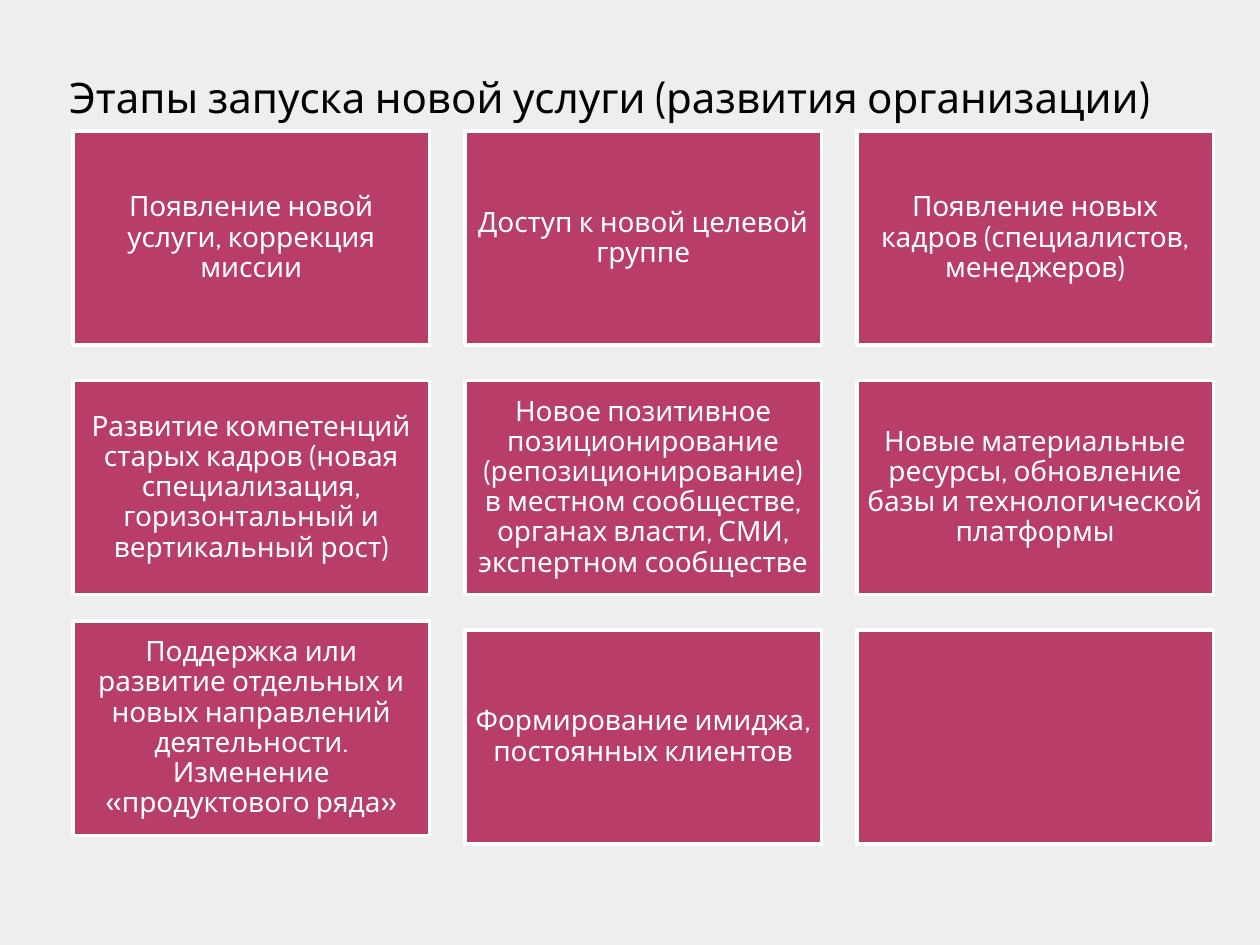
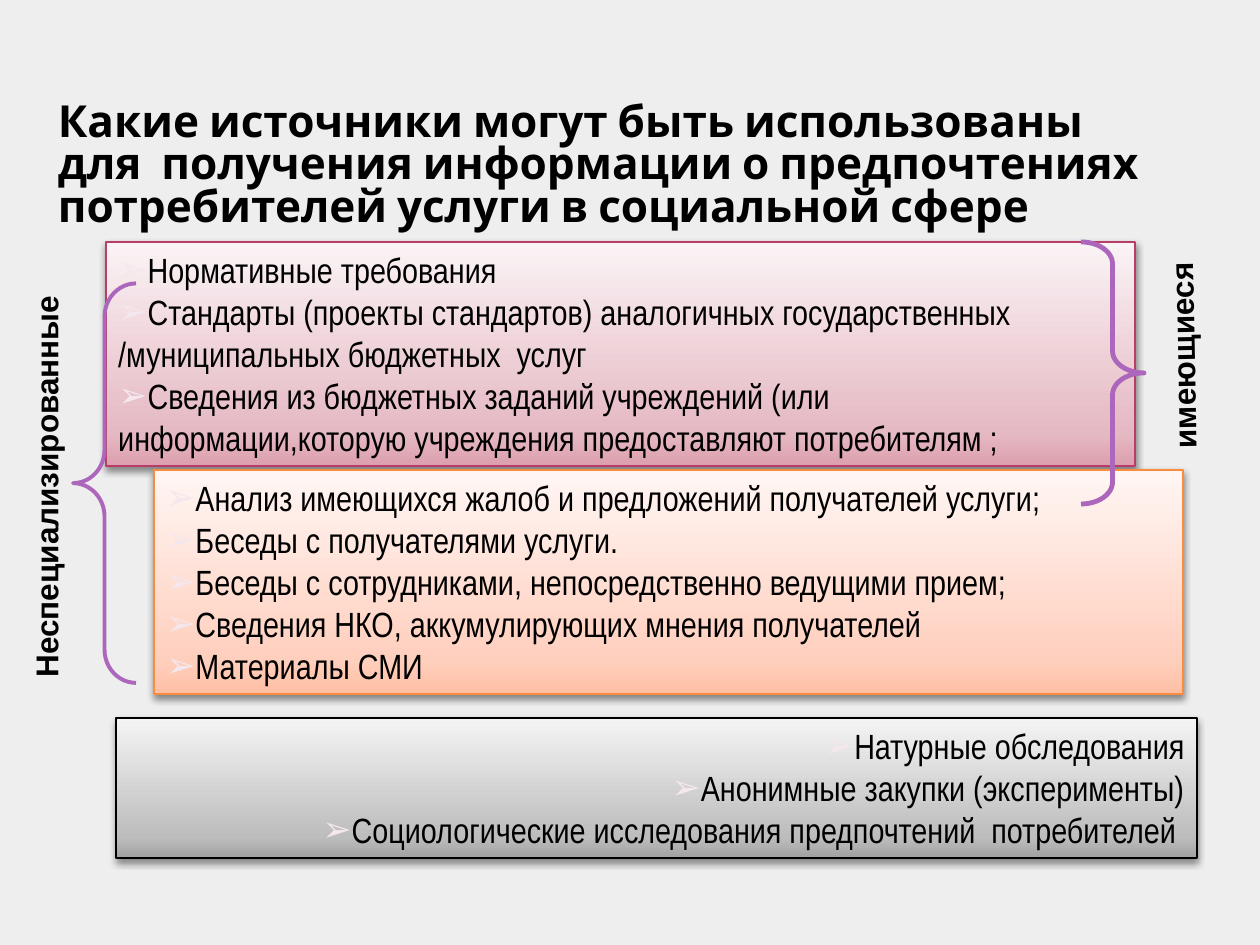
from lxml.etree import SubElement
from pptx import Presentation
from pptx.dml.color import RGBColor
from pptx.enum.shapes import MSO_SHAPE
from pptx.enum.text import MSO_ANCHOR, MSO_AUTO_SIZE, PP_ALIGN
from pptx.oxml.ns import qn
from pptx.util import Inches, Pt

COLORS = {
    "back": "EEEEEE", "text": "000000", "white": "FFFFFF", "tile": "B83D68",
    "orange": "FA8D3D", "brace": "AC66BB", "bullet": "F4E7ED",
}
GRADIENTS = {
    "pink": ("DC9FAD", "E5B9C3", "FAF3F5"),
    "peach": ("FFBEA3", "FFCFBD", "FFF6F4"),
    "grey": ("A2A2A2", "BDBDBD", "F4F4F4"),
}
STOPS = (0, 15, 100)
HEAD_FONT, LIST_FONT, LABEL_FONT = "Cabin", "Arial Narrow", "Arial"

STAGES_TITLE = "Этапы запуска новой услуги (развития организации)"
STAGES = [
    ["Появление новой услуги, коррекция миссии",
     "Доступ к новой целевой группе",
     "Появление новых кадров (специалистов, менеджеров)"],
    ["Развитие компетенций старых кадров (новая специализация, "
     "горизонтальный и вертикальный рост)",
     "Новое позитивное позиционирование (репозиционирование) в местном "
     "сообществе, органах власти, СМИ, экспертном сообществе",
     "Новые материальные ресурсы, обновление базы и технологической платформы"],
    ["Поддержка или развитие отдельных и новых направлений деятельности. "
     "Изменение «продуктового ряда»",
     "Формирование имиджа, постоянных клиентов",
     ""],
]
TILE_W, TILE_H, TILE_GAP = 2.83, 1.7, 0.28
GRID_LEFT, GRID_TOP = 0.58, 1.04
TILE_LIFT = {(2, 0): 0.07}  # (row, column): raised above its row

SOURCES_TITLE = ("Какие источники могут быть использованы для  получения "
                 "информации о предпочтениях потребителей услуги в социальной сфере")
SOURCES = [
    {"at": (0.84, 1.92, 8.17, 1.78), "grad": "pink", "line": "tile", "right": False,
     "items": ["Нормативные требования",
               "Стандарты (проекты стандартов) аналогичных государственных "
               "/муниципальных бюджетных  услуг",
               "Сведения из бюджетных заданий учреждений (или  "
               "информации,которую учреждения предоставляют потребителям ;"]},
    {"at": (1.22, 3.73, 8.17, 1.78), "grad": "peach", "line": "orange", "right": False,
     "items": ["Анализ имеющихся жалоб и предложений получателей услуги;",
               "Беседы с получателями услуги.",
               "Беседы с сотрудниками, непосредственно ведущими прием;",
               "Сведения НКО, аккумулирующих мнения получателей",
               "Материалы СМИ"]},
    {"at": (0.92, 5.7, 8.58, 1.11), "grad": "grey", "line": "text", "right": True,
     "items": ["Натурные обследования",
               "Анонимные закупки (эксперименты)",
               "Социологические исследования предпочтений  потребителей "]},
]
BRACES = [
    (MSO_SHAPE.RIGHT_BRACE, (8.58, 1.92, 0.5, 2.08), 0.347, 2.75),
    (MSO_SHAPE.LEFT_BRACE, (0.58, 2.25, 0.5, 3.17), 0.528, 2.25),
]
LABELS = [
    ("имеющиеся", (8.3, 2.38, 2.16, 0.4), 268.9),
    ("Неспециализированные", (-1.29, 3.62, 3.31, 0.4), 270),
]


def rgb(name):
    return RGBColor.from_string(COLORS[name])


def add_run(p, text, font, size, color="text", bold=False):
    r = p.add_run()
    r.text = text
    r.font.name, r.font.size, r.font.bold = font, Pt(size), bold
    r.font.color.rgb = rgb(color)


def add_slide(prs, title, at, size, bold=False, spacing=None):
    s = prs.slides.add_slide(prs.slide_layouts.get_by_name("Title Only"))
    sp = s.shapes.title
    sp.left, sp.top, sp.width, sp.height = map(Inches, at)
    tf = sp.text_frame
    tf.auto_size, tf.vertical_anchor = MSO_AUTO_SIZE.NONE, MSO_ANCHOR.BOTTOM
    p = tf.paragraphs[0]
    p.alignment, p.line_spacing = PP_ALIGN.LEFT, spacing
    add_run(p, title, HEAD_FONT, size, bold=bold)
    return s


def add_outlined(s, kind, at, line, width):
    sp = s.shapes.add_shape(kind, *map(Inches, at))
    sp.shadow.inherit = False
    sp.line.color.rgb, sp.line.width = rgb(line), Pt(width)
    return sp


def fill_upwards(sp, colors):
    """Fill with a gradient whose first colour is at the bottom edge."""
    sp.fill.gradient()
    sp.fill.gradient_angle = 90
    stops = next(sp.element.spPr.iter(qn("a:gsLst")))
    for old in list(stops):
        stops.remove(old)
    for share, color in zip(STOPS, colors):
        gs = SubElement(stops, qn("a:gs"), pos=str(share * 1000))
        SubElement(gs, qn("a:srgbClr"), val=color)


def drop_shadow(sp):
    effects = sp.element.spPr.find(qn("a:effectLst"))
    shadow = SubElement(effects, qn("a:outerShdw"), blurRad=str(Pt(4)), dist=str(Pt(2)),
                        dir="5400000", rotWithShape="0")
    color = SubElement(shadow, qn("a:srgbClr"), val=COLORS["text"])
    SubElement(color, qn("a:alpha"), val="43000")


def add_bullet(p, margin):
    pPr = p._p.get_or_add_pPr()
    pPr.set("marL", str(Inches(margin)))
    pPr.set("indent", "0")
    SubElement(SubElement(pPr, qn("a:buClr")), qn("a:srgbClr"), val=COLORS["bullet"])
    SubElement(pPr, qn("a:buFont"), typeface=LABEL_FONT)
    SubElement(pPr, qn("a:buChar"), char="➢")


def add_tile(s, row, col, text):
    at = (GRID_LEFT + col * (TILE_W + TILE_GAP),
          GRID_TOP + row * (TILE_H + TILE_GAP) - TILE_LIFT.get((row, col), 0),
          TILE_W, TILE_H)
    sp = add_outlined(s, MSO_SHAPE.RECTANGLE, at, "white", 2)
    sp.fill.solid()
    sp.fill.fore_color.rgb = rgb("tile")
    if not text:
        return
    tf = sp.text_frame
    tf.word_wrap, tf.vertical_anchor = True, MSO_ANCHOR.MIDDLE
    tf.margin_left = tf.margin_right = tf.margin_top = tf.margin_bottom = Inches(0.07)
    p = tf.paragraphs[0]
    p.alignment, p.line_spacing = PP_ALIGN.CENTER, 0.9
    add_run(p, text, HEAD_FONT, 16, "white")


def add_source_box(s, box):
    sp = add_outlined(s, MSO_SHAPE.RECTANGLE, box["at"], box["line"], 1)
    fill_upwards(sp, GRADIENTS[box["grad"]])
    drop_shadow(sp)
    tf = sp.text_frame
    tf.word_wrap, tf.vertical_anchor = True, MSO_ANCHOR.TOP
    tf.auto_size = MSO_AUTO_SIZE.SHAPE_TO_FIT_TEXT
    for i, item in enumerate(box["items"]):
        p = tf.add_paragraph() if i else tf.paragraphs[0]
        p.alignment = PP_ALIGN.RIGHT if box["right"] else PP_ALIGN.LEFT
        p.level = 1 if box["right"] else 0
        add_bullet(p, 0.5 * p.level)
        add_run(p, item, LIST_FONT, 20)


def add_brace(s, kind, at, curve, width):
    sp = add_outlined(s, kind, at, "brace", width)
    sp.fill.background()
    sp.adjustments[0], sp.adjustments[1] = curve, 0.5


def add_label(s, text, at, turn):
    sp = s.shapes.add_textbox(*map(Inches, at))
    sp.rotation = turn
    sp.text_frame.word_wrap = True
    add_run(sp.text_frame.paragraphs[0], text, LABEL_FONT, 18, bold=True)


def main():
    prs = Presentation()
    prs.slide_width, prs.slide_height = Inches(10), Inches(7.5)
    back = prs.slide_master.background.fill
    back.solid()
    back.fore_color.rgb = rgb("back")

    s = add_slide(prs, STAGES_TITLE, (0.45, 0.21, 9.33, 0.81), 24)
    for row, texts in enumerate(STAGES):
        for col, text in enumerate(texts):
            add_tile(s, row, col, text)

    s = add_slide(prs, SOURCES_TITLE, (0.36, 0.72, 9, 1.16), 25.2, bold=True, spacing=0.8)
    for box in SOURCES:
        add_source_box(s, box)
    for brace in BRACES:
        add_brace(s, *brace)
    for label in LABELS:
        add_label(s, *label)

    prs.save("out.pptx")


if __name__ == "__main__":
    main()
